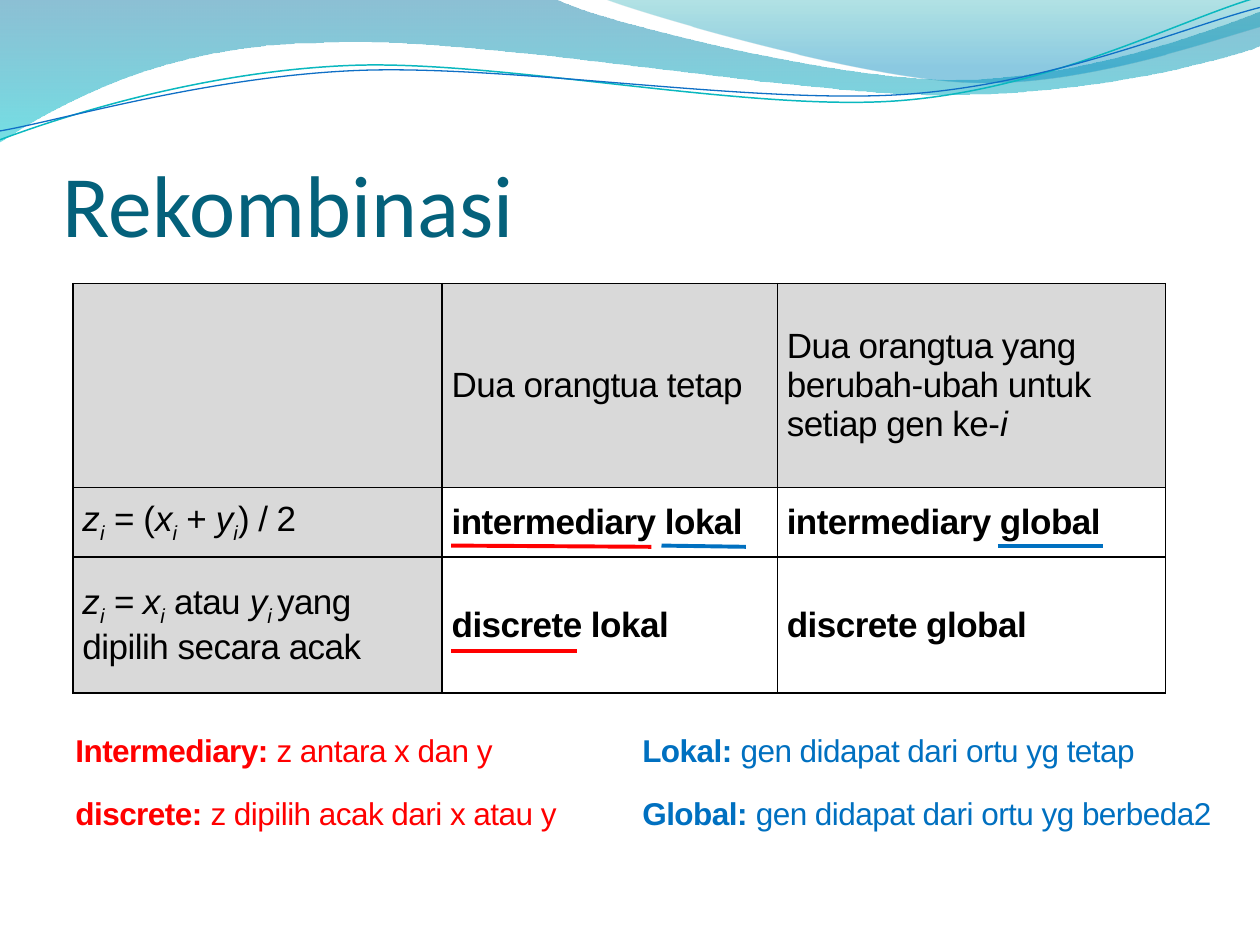
from math import cos, radians, sin

from lxml.etree import SubElement
from pptx import Presentation
from pptx.dml.color import RGBColor
from pptx.enum.shapes import MSO_CONNECTOR as Conn
from pptx.enum.text import MSO_ANCHOR as Anchor, MSO_AUTO_SIZE as AutoSize
from pptx.oxml.ns import qn
from pptx.util import Inches, Pt

BLACK = RGBColor(0, 0, 0)
GRAY = RGBColor(0xD9, 0xD9, 0xD9)
RED = RGBColor(0xFF, 0, 0)
BLUE = RGBColor(0, 0x70, 0xC0)
TITLE = RGBColor(0x04, 0x61, 0x7B)
WAVE_TOP, WAVE_BOTTOM = RGBColor(0, 0x74, 0xA1), RGBColor(0, 0xC6, 0xCF)
CREST_TOP, CREST_BOTTOM = RGBColor(0, 0xA1, 0xA9), RGBColor(0, 0x8B, 0xBF)
TEAL, NAVY = RGBColor(0x0A, 0xB8, 0xBF), RGBColor(0x0F, 0x6F, 0xC6)

PLAIN, BOLD, ITALIC, SUB = {}, {"bold": True}, {"italic": True}, {"italic": True, "sub": True}

TILT = 2.7
WAVE = [(0, -0.01), (4.4, -0.01),
        (4.76, 0.17, 6.64, 0.63, 7.58, 0.63), (8.53, 0.63, 9.58, 0.26, 10, 0.09),
        (10.01, 0.36),
        (9.83, 0.44, 8.7, 0.76, 7.46, 0.75), (6.22, 0.75, 3.82, 0.28, 2.57, 0.34),
        (1.29, 0.35, 0.46, 0.83, -0.01, 1.13)]
CREST = [(4.79, -0.01),
         (5.09, 0.11, 6.82, 0.62, 7.69, 0.65), (8.56, 0.69, 9.61, 0.32, 10, 0.21),
         (10, 0)]
TEAL_CURVE = [(0, 1.11), (0.48, 0.93, 1.58, 0.57, 2.77, 0.52),
              (3.95, 0.47, 5.93, 0.89, 7.13, 0.8), (8.33, 0.71, 9.38, 0.15, 9.98, -0.02)]
NAVY_CURVE = [(0, 1.04), (0.47, 0.96, 1.64, 0.61, 2.83, 0.56),
              (4.03, 0.51, 5.97, 0.83, 7.17, 0.75), (8.36, 0.67, 9.41, 0.21, 10, 0.06)]

COLS, ROWS = [2.93, 2.66, 3.08], [1.62, 0.55, 1.08]
CELLS = [
    [[],
     [("Dua orangtua tetap", PLAIN)],
     [("Dua orangtua yang berubah-ubah untuk setiap gen ke-", PLAIN), ("i", ITALIC)]],
    [[("z", ITALIC), ("i", SUB), (" = ", ITALIC), ("(", PLAIN), ("x", ITALIC), ("i", SUB),
      (" + ", PLAIN), ("y", ITALIC), ("i", SUB), (") / 2", PLAIN)],
     [("intermediary lokal", BOLD)],
     [("intermediary global", BOLD)]],
    [[("z", ITALIC), ("i", SUB), (" = x", ITALIC), ("i", SUB), (" atau ", PLAIN),
      ("y", ITALIC), ("i ", SUB), ("yang dipilih secara acak", PLAIN)],
     [("discrete lokal", BOLD)],
     [("discrete global", BOLD)]],
]
UNDERLINES = [
    (3.58, 4.33, 5.17, 4.34, RED),
    (3.58, 5.17, 4.58, 5.17, RED),
    (5.25, 4.33, 5.92, 4.34, BLUE),
    (7.92, 4.33, 8.75, 4.33, BLUE),
]
NOTES = [
    (0.5, 5.75, 3.64, "Intermediary: ", "z antara x dan y", RED),
    (0.5, 6.25, 4.05, "discrete: ", "z dipilih acak dari x atau y", RED),
    (5, 5.75, 4.14, "Lokal: ", "gen didapat dari ortu yg tetap", BLUE),
    (5, 6.25, 4.76, "Global: ", "gen didapat dari ortu yg berbeda2", BLUE),
]


def set_attrs(obj, values):
    for name, value in values.items():
        setattr(obj, name, value)


def pairs(segment):
    return list(zip(segment[::2], segment[1::2]))


def turn(segments, degrees):
    ends = [seg[-2:] for seg in segments]
    cx, cy = ((min(axis) + max(axis)) / 2 for axis in zip(*ends))
    c, s = cos(radians(degrees)), sin(radians(degrees))
    return [tuple(v for x, y in pairs(seg)
                  for v in (cx + (x - cx) * c - (y - cy) * s,
                            cy + (x - cx) * s + (y - cy) * c))
            for seg in segments]


def add_outline(slide, segments, close):
    ends = [(Inches(x), Inches(y)) for x, y in (seg[-2:] for seg in segments)]
    builder = slide.shapes.build_freeform(*ends[0])
    builder.add_line_segments(ends[1:], close=close)
    sp = builder.convert_to_shape()
    sp.shadow.inherit = False
    steps = list(sp._element.spPr.iter(qn("a:lnTo")))
    for step, seg in zip(steps, segments[1:]):
        if len(seg) == 6:
            bend = SubElement(step.getparent(), qn("a:cubicBezTo"))
            for x, y in pairs(seg):
                SubElement(bend, qn("a:pt"), x=str(Inches(x) - sp.left),
                           y=str(Inches(y) - sp.top))
            step.getparent().replace(step, bend)
    return sp


def add_wave(slide, segments, stops):
    sp = add_outline(slide, segments, True)
    sp.line.fill.background()
    sp.fill.gradient()
    sp.fill.gradient_angle = 270
    for stop, (position, color, _) in zip(sp.fill.gradient_stops, stops):
        stop.position = position
        stop.color.rgb = color
    for clr, (_, _, alpha) in zip(sp._element.spPr.iter(qn("a:srgbClr")), stops):
        SubElement(clr, qn("a:alpha")).set("val", str(alpha * 1000))


def add_curve(slide, segments, color, width):
    sp = add_outline(slide, turn(segments, TILT), False)
    sp.rotation = 360 - TILT
    sp.fill.background()
    sp.line.color.rgb = color
    sp.line.width = Pt(width)


def add_run(p, text, size, color, style=PLAIN, font="Arial", spacing=-30):
    r = p.add_run()
    r.text = text
    set_attrs(r.font, {"name": font, "size": Pt(size), "bold": style.get("bold", False),
                       "italic": style.get("italic", False)})
    r.font.color.rgb = color
    rPr = r._r.get_or_add_rPr()
    if spacing:
        rPr.set("spc", str(spacing))
    if style.get("sub"):
        rPr.set("baseline", "-25000")


def add_title(slide, text):
    tf = slide.shapes.add_textbox(Inches(0.5), Inches(0.77), Inches(9), Inches(1.25)).text_frame
    set_attrs(tf, {"word_wrap": True, "vertical_anchor": Anchor.BOTTOM, "margin_left": 0,
                   "margin_top": Inches(0.05), "margin_right": 0, "margin_bottom": 0})
    add_run(tf.paragraphs[0], text, 50, TITLE, font="Calibri", spacing=0)


def add_note(slide, x, y, width, term, meaning, color):
    tf = slide.shapes.add_textbox(Inches(x), Inches(y), Inches(width), Inches(0.4)).text_frame
    set_attrs(tf, {"word_wrap": False, "auto_size": AutoSize.SHAPE_TO_FIT_TEXT})
    add_run(tf.paragraphs[0], term, 18, color, BOLD)
    add_run(tf.paragraphs[0], meaning, 18, color)


def add_underline(slide, x1, y1, x2, y2, color):
    line = slide.shapes.add_connector(Conn.STRAIGHT, *map(Inches, (x1, y1, x2, y2)))
    line.line.color.rgb = color
    line.line.width = Pt(2.25)
    SubElement(line._element.spPr, qn("a:effectLst"))


def add_borders(cell):
    tcPr = cell._tc.get_or_add_tcPr()
    for side in ("lnL", "lnR", "lnT", "lnB"):
        ln = SubElement(tcPr, qn(f"a:{side}"), w=str(Pt(1)))
        SubElement(SubElement(ln, qn("a:solidFill")), qn("a:srgbClr"), val=str(BLACK))


def fill_cell(cell, runs, shaded):
    set_attrs(cell, {"vertical_anchor": Anchor.MIDDLE, "margin_left": Pt(5.4),
                     "margin_right": Pt(5.4), "margin_top": 0, "margin_bottom": 0})
    add_borders(cell)
    if shaded:
        cell.fill.solid()
        cell.fill.fore_color.rgb = GRAY
    else:
        cell.fill.background()
    p = cell.text_frame.paragraphs[0]
    set_attrs(p, {"space_before": Pt(6), "space_after": Pt(6)})
    for text, style in runs:
        add_run(p, text, 20, BLACK, style)


def add_grid(slide):
    table = slide.shapes.add_table(len(ROWS), len(COLS), Inches(0.58), Inches(2.25),
                                   Inches(sum(COLS)), Inches(sum(ROWS))).table
    set_attrs(table, {"first_row": False, "horz_banding": False})
    for col, width in zip(table.columns, COLS):
        col.width = Inches(width)
    for row, height in zip(table.rows, ROWS):
        row.height = Inches(height)
    for i, row in enumerate(CELLS):
        for j, runs in enumerate(row):
            fill_cell(table.cell(i, j), runs, i == 0 or j == 0)


def main():
    prs = Presentation()
    set_attrs(prs, {"slide_width": Inches(10), "slide_height": Inches(7.5)})
    s = prs.slides.add_slide(prs.slide_layouts[6])
    add_wave(s, WAVE, [(0, WAVE_TOP, 45), (1, WAVE_BOTTOM, 55)])
    add_wave(s, CREST, [(0, CREST_TOP, 30), (0.8, CREST_BOTTOM, 45)])
    add_curve(s, TEAL_CURVE, TEAL, 0.85)
    add_curve(s, NAVY_CURVE, NAVY, 0.75)
    add_title(s, "Rekombinasi")
    add_grid(s)
    for underline in UNDERLINES:
        add_underline(s, *underline)
    for note in NOTES:
        add_note(s, *note)
    prs.save("out.pptx")


if __name__ == "__main__":
    main()
